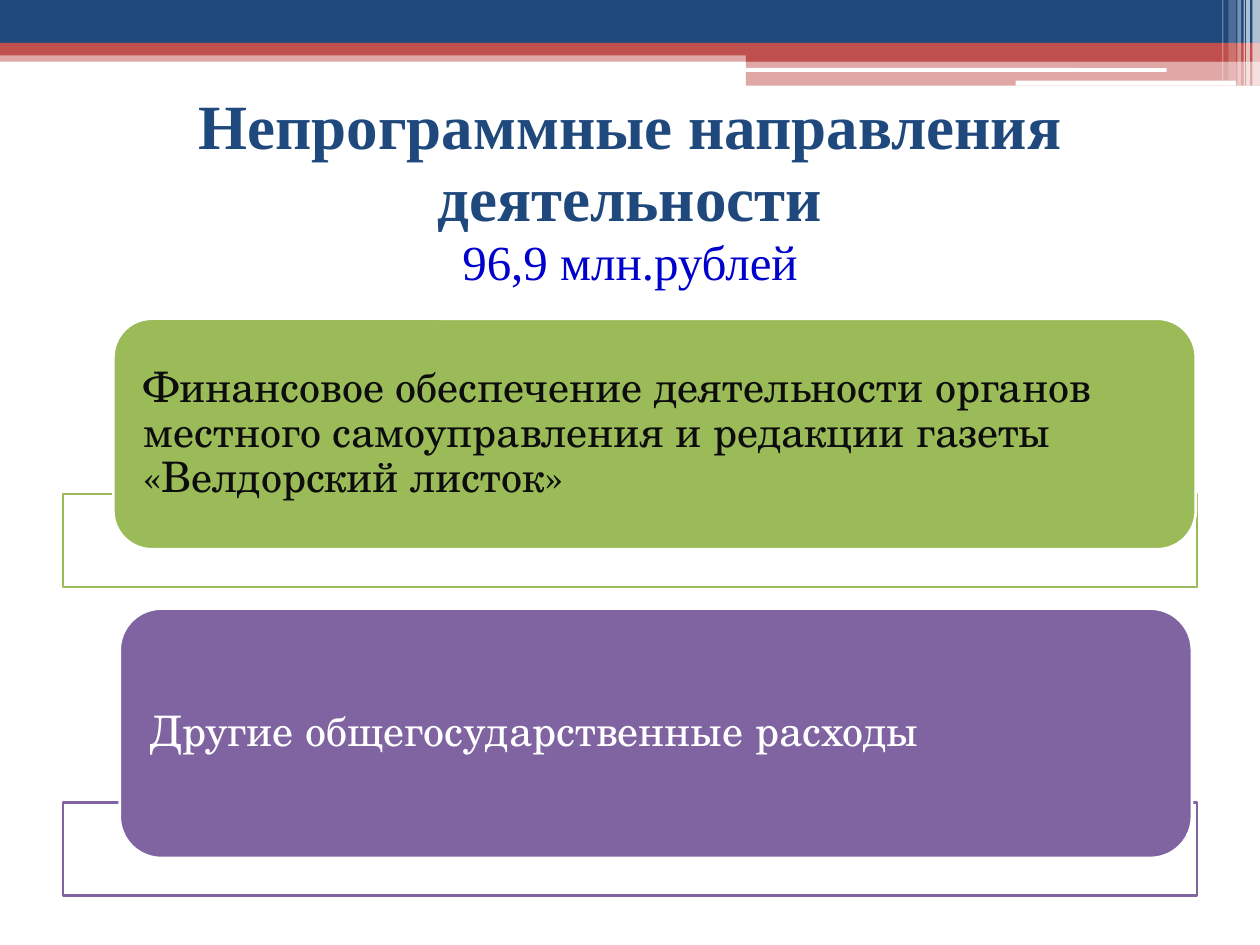
from lxml import etree
from pptx import Presentation, util as u
from pptx.dml.color import RGBColor
from pptx.enum import shapes, text
from pptx.oxml.ns import qn

NAVY = RGBColor(0x1F, 0x49, 0x7D)
RED = RGBColor(0xC0, 0x50, 0x4D)
GREEN = RGBColor(0x9B, 0xBB, 0x59)
PURPLE = RGBColor(0x80, 0x64, 0xA2)
BLUE = RGBColor(0x00, 0x00, 0xCC)
INK = RGBColor(0x0D, 0x0D, 0x0D)
WHITE = RGBColor(0xFF, 0xFF, 0xFF)

COLUMNS, ROWS = 100, 75
RECT = shapes.MSO_SHAPE.RECTANGLE
ROUND = shapes.MSO_SHAPE.ROUNDED_RECTANGLE


def add_run(paragraph, words, *, font, size, color, bold=False):
    run = paragraph.add_run()
    run.text = words
    run.font.name, run.font.size, run.font.bold = font, u.Pt(size), bold
    run.font.color.rgb = color


class Deck:
    """Style and current slide; lengths are grid columns and rows."""
    title_font = "Times New Roman"
    body_font = "TeX Gyre Schola"

    def __init__(self):
        self.show = Presentation()
        self.show.slide_width, self.show.slide_height = u.Inches(10), u.Inches(7.5)
        self.slide = self.show.slides.add_slide(self.show.slide_layouts[5])

    def area(self, left, top, width, height):
        column = self.show.slide_width / COLUMNS
        row = self.show.slide_height / ROWS
        return [round(n) for n in (left * column, top * row, width * column, height * row)]

    def block(self, place, fill, *, kind=RECT, opacity=100, line=None):
        shape = self.slide.shapes.add_shape(kind, *self.area(*place))
        shape.shadow.inherit = False
        shape.fill.solid()
        shape.fill.fore_color.rgb = fill
        if opacity < 100:
            color = shape.fill._xPr.find(qn("a:solidFill"))[0]
            etree.SubElement(color, qn("a:alpha")).set("val", str(opacity * 1000))
        if line is None:
            shape.line.fill.background()
        else:
            shape.line.color.rgb = line
            shape.line.width = u.Pt(1.5)
        return shape

    def title(self, place, heading, amount):
        holder = self.slide.shapes.title
        holder.left, holder.top, holder.width, holder.height = self.area(*place)
        frame = holder.text_frame
        frame.auto_size = text.MSO_AUTO_SIZE.NONE
        frame.word_wrap = True
        frame.vertical_anchor = text.MSO_ANCHOR.MIDDLE
        frame.margin_bottom = u.Inches(0.67)
        paragraph = frame.paragraphs[0]
        paragraph.alignment = text.PP_ALIGN.CENTER
        paragraph.line_spacing = 0.95
        add_run(paragraph, heading, font=self.title_font, size=36, color=NAVY, bold=True)
        paragraph.add_line_break()
        add_run(paragraph, amount, font=self.title_font, size=28, color=BLUE)

    def direction(self, card_place, frame_top, accent, words, ink):
        """A filled card overlapping a thin outlined frame."""
        self.block((5, frame_top, 90, 7.4), WHITE, opacity=90, line=accent)
        card = self.block(card_place, accent, kind=ROUND, line=WHITE)
        frame = card.text_frame
        frame.word_wrap = True
        frame.vertical_anchor = text.MSO_ANCHOR.MIDDLE
        frame.margin_left = frame.margin_right = u.Inches(0.15)
        frame.margin_top = frame.margin_bottom = 0
        paragraph = frame.paragraphs[0]
        paragraph.alignment = text.PP_ALIGN.LEFT
        paragraph.line_spacing = 0.9
        add_run(paragraph, words, font=self.body_font, size=24, color=ink)

    def header(self):
        bands = [
            ((0, 4, 100, 0.9), RED, 50),
            ((0, 0, 100, 3.4), NAVY, 100),
            ((0, 3.4, 100, 1), RED, 100),
            ((59.2, 3.9, 40.8, 1), RED, 100),
            ((59.2, 4.8, 40.8, 2), RED, 50),
        ]
        for place, color, opacity in bands:
            self.block(place, color, opacity=opacity)
        for place in ((59.1, 5.4, 33.5, 0.3), (80.6, 6.4, 17.5, 0.4)):
            self.block(place, WHITE, kind=ROUND)
        stripes = [(99.4, 0.6, 6.8, 65), (98.9, 0.3, 6.8, 65), (98.7, 0.1, 6.8, 60),
                   (98.2, 0.3, 6.8, 40), (97.5, 0.6, 6.4, 20), (97, 0.1, 6.4, 30)]
        for left, width, height, opacity in stripes:
            self.block((left, 0, width, height), WHITE, opacity=opacity)


def main():
    deck = Deck()
    deck.header()
    deck.title((5, 12.5, 90, 11.7), "Непрограммные направления деятельности",
               "96,9 млн.рублей")
    deck.direction((9, 25.3, 85.9, 18.3), 39.2, GREEN,
                   "Финансовое обеспечение деятельности органов местного "
                   "самоуправления и редакции газеты «Велдорский листок»", INK)
    deck.direction((9.5, 48.3, 85.1, 19.8), 63.7, PURPLE,
                   "Другие общегосударственные расходы", WHITE)
    deck.show.save("out.pptx")


if __name__ == "__main__":
    main()
